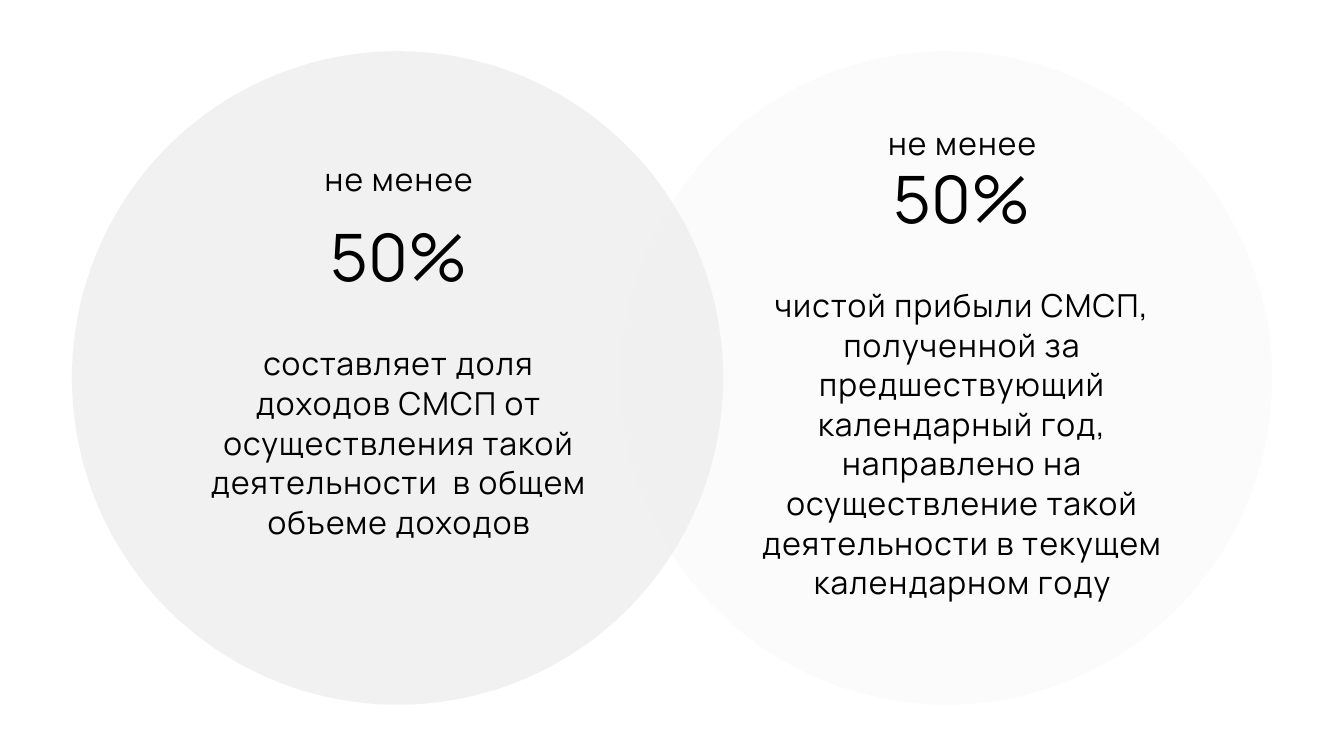
from dataclasses import dataclass

from lxml.etree import SubElement
from pptx import Presentation
from pptx.dml.color import RGBColor
from pptx.enum.shapes import MSO_SHAPE as Shape
from pptx.enum.text import PP_ALIGN as Align
from pptx.oxml.ns import qn
from pptx.slide import Slide
from pptx.util import Inches, Pt

WIDTH, HEIGHT = 11.02, 6.2
COLORS = {"circle": "EFEFEF", "text": "000000"}
FONT = "Manrope"
CIRCLE_WIDTH, CIRCLE_HEIGHT = 5.34, 5.36
TEXT_WIDTH = 3.3


@dataclass(frozen=True)
class TextStyle:
    size: float
    leading: float
    tracking: float = 0


LABEL = TextStyle(18.7, 23.4, 0.7)
FIGURE = TextStyle(38.6, 44.4)


@dataclass(frozen=True)
class TextLine:
    text: str
    top: float
    height: float
    style: TextStyle


@dataclass(frozen=True)
class Condition:
    circle_left: float
    opacity: int
    text_left: float
    lines: tuple[TextLine, ...]


def make_condition(circle_left: float, opacity: int, text_left: float, label_top: float,
                   figure_top: float, body: str, body_height: float) -> Condition:
    return Condition(circle_left, opacity, text_left, (
        TextLine("не менее", label_top, 0.3, LABEL),
        TextLine("50%", figure_top, 0.62, FIGURE),
        TextLine(body, figure_top + 1.01, body_height, LABEL),
    ))


CONDITIONS = (
    make_condition(
        0.59, 85, 1.62, 1.3, 1.8,
        "составляет доля доходов СМСП от осуществления такой деятельности  в общем "
        "объеме доходов", 1.27),
    make_condition(
        5.09, 20, 6.24, 1.0, 1.32,
        "чистой прибыли СМСП, полученной за предшествующий календарный год, направлено "
        "на осуществление такой деятельности в текущем календарном году", 2.56),
)


def add_circle(slide: Slide, condition: Condition) -> None:
    top = (HEIGHT - CIRCLE_HEIGHT) / 2
    sp = slide.shapes.add_shape(Shape.OVAL, Inches(condition.circle_left), Inches(top),
                                Inches(CIRCLE_WIDTH), Inches(CIRCLE_HEIGHT))
    sp.shadow.inherit = False
    sp.line.fill.background()
    sp.fill.solid()
    sp.fill.fore_color.rgb = RGBColor.from_string(COLORS["circle"])
    color = sp.fill._xPr.find(f"{qn('a:solidFill')}/{qn('a:srgbClr')}")
    SubElement(color, qn("a:alpha"), val=str(condition.opacity * 1000))


def add_text(slide: Slide, left: float, line: TextLine) -> None:
    sp = slide.shapes.add_textbox(Inches(left), Inches(line.top),
                                  Inches(TEXT_WIDTH), Inches(line.height))
    tf = sp.text_frame
    tf.word_wrap = True
    tf.margin_left = tf.margin_top = tf.margin_right = tf.margin_bottom = 0
    tf.text = line.text
    p = tf.paragraphs[0]
    p.alignment = Align.CENTER
    p.line_spacing = Pt(line.style.leading)
    r = p.runs[0]
    r.font.name = FONT
    r.font.size = Pt(line.style.size)
    r.font.color.rgb = RGBColor.from_string(COLORS["text"])
    if line.style.tracking:
        r.font._element.set("spc", str(round(line.style.tracking * 100)))


def main() -> None:
    prs = Presentation()
    prs.slide_width, prs.slide_height = Inches(WIDTH), Inches(HEIGHT)
    slide = prs.slides.add_slide(prs.slide_layouts.get_by_name("Blank"))
    for condition in CONDITIONS:
        add_circle(slide, condition)
    for condition in CONDITIONS:
        for line in condition.lines:
            add_text(slide, condition.text_left, line)
    prs.save("out.pptx")


if __name__ == "__main__":
    main()
